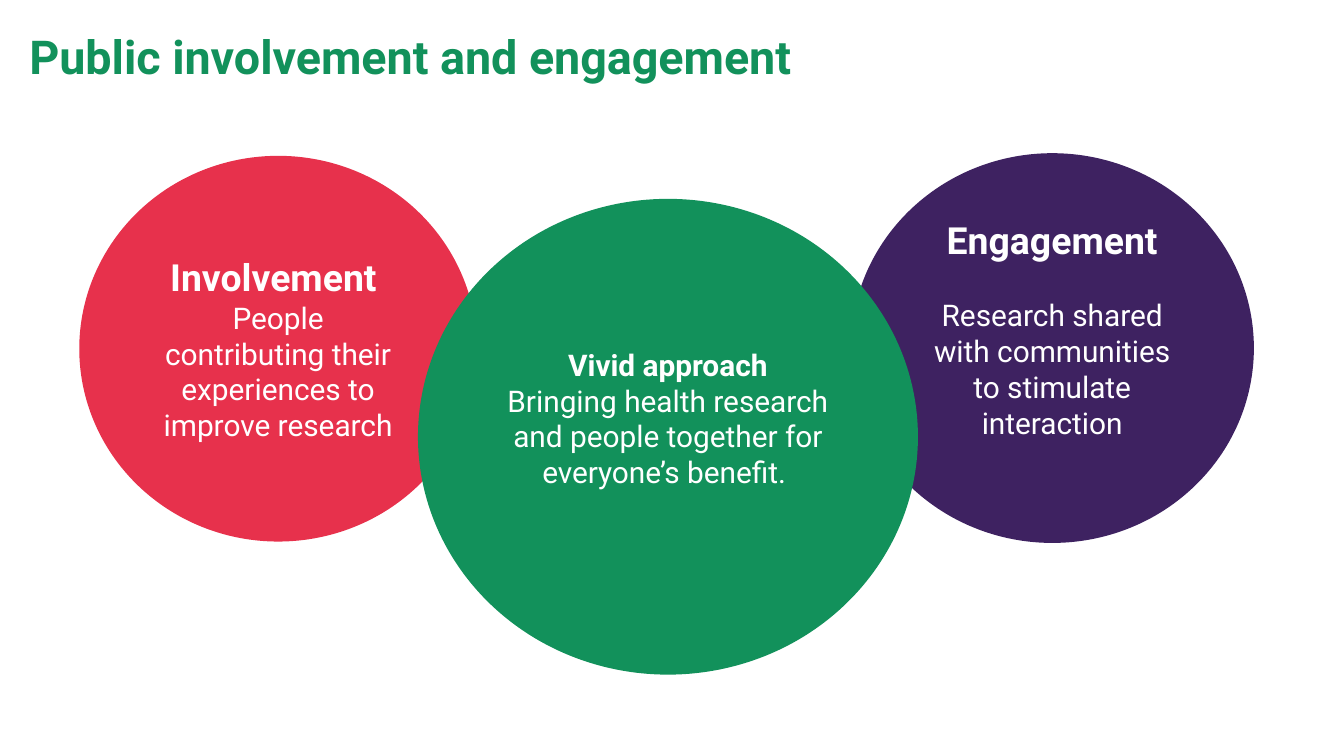
from pptx import Presentation
from pptx.dml.color import RGBColor
from pptx.enum.shapes import MSO_SHAPE
from pptx.enum.text import MSO_ANCHOR, MSO_AUTO_SIZE, PP_ALIGN
from pptx.util import Inches, Pt

GREEN, RED, PURPLE, WHITE = "12915B", "E7314C", "3E2261", "FFFFFF"


def rgb(value):
    return RGBColor.from_string(value)


class SlideBuilder:
    font = "Roboto"

    def __init__(self, slide):
        self.s = slide

    def run(self, p, text, size, color, bold=False):
        r = p.add_run()
        r.text = text
        r.font.name = self.font
        r.font.size = Pt(size)
        r.font.bold = bold
        r.font.color.rgb = rgb(color)

    def title(self, text, left, top, width, height):
        sp = self.s.shapes.add_textbox(*map(Inches, (left, top, width, height)))
        tf = sp.text_frame
        tf.word_wrap = True
        tf.auto_size = MSO_AUTO_SIZE.SHAPE_TO_FIT_TEXT
        self.run(tf.paragraphs[0], text, 25, GREEN, bold=True)

    def circle(self, box, fill, heading, body, heading_size=20,
               anchor=MSO_ANCHOR.TOP, inset=0.05, gap=0):
        """Ellipse with a bold heading; inset is above it in inches, gap below it in points."""
        sp = self.s.shapes.add_shape(MSO_SHAPE.OVAL, *map(Inches, box))
        sp.shadow.inherit = False
        sp.fill.solid()
        sp.fill.fore_color.rgb = rgb(fill)
        sp.line.fill.background()
        tf = sp.text_frame
        tf.word_wrap = True
        tf.vertical_anchor = anchor
        tf.margin_top = Inches(inset)
        p = tf.paragraphs[0]
        p.alignment = PP_ALIGN.CENTER
        p.space_after = Pt(gap)
        self.run(p, heading, heading_size, WHITE, bold=True)
        p = tf.add_paragraph()
        p.alignment = PP_ALIGN.CENTER
        self.run(p, body, 16, WHITE)


def main():
    prs = Presentation()
    prs.slide_width = Inches(10)
    prs.slide_height = prs.slide_width * 9 // 16
    b = SlideBuilder(prs.slides.add_slide(prs.slide_layouts[6]))

    b.title("Public involvement and engagement", 0.12, 0.16, 9.33, 0.52)
    b.circle((0.59, 1.16, 2.96, 2.87), RED, "Involvement ",
             "People contributing their experiences to improve research",
             anchor=MSO_ANCHOR.MIDDLE)
    b.circle((6.33, 1.14, 3, 2.9), PURPLE, "Engagement",
             "Research shared with communities to stimulate interaction", gap=19)
    b.circle((3.11, 1.48, 3.72, 3.54), GREEN, "Vivid approach",
             "Bringing health research and people together for everyone’s benefit. ",
             heading_size=16, inset=0.58)

    prs.save("out.pptx")


if __name__ == "__main__":
    main()
